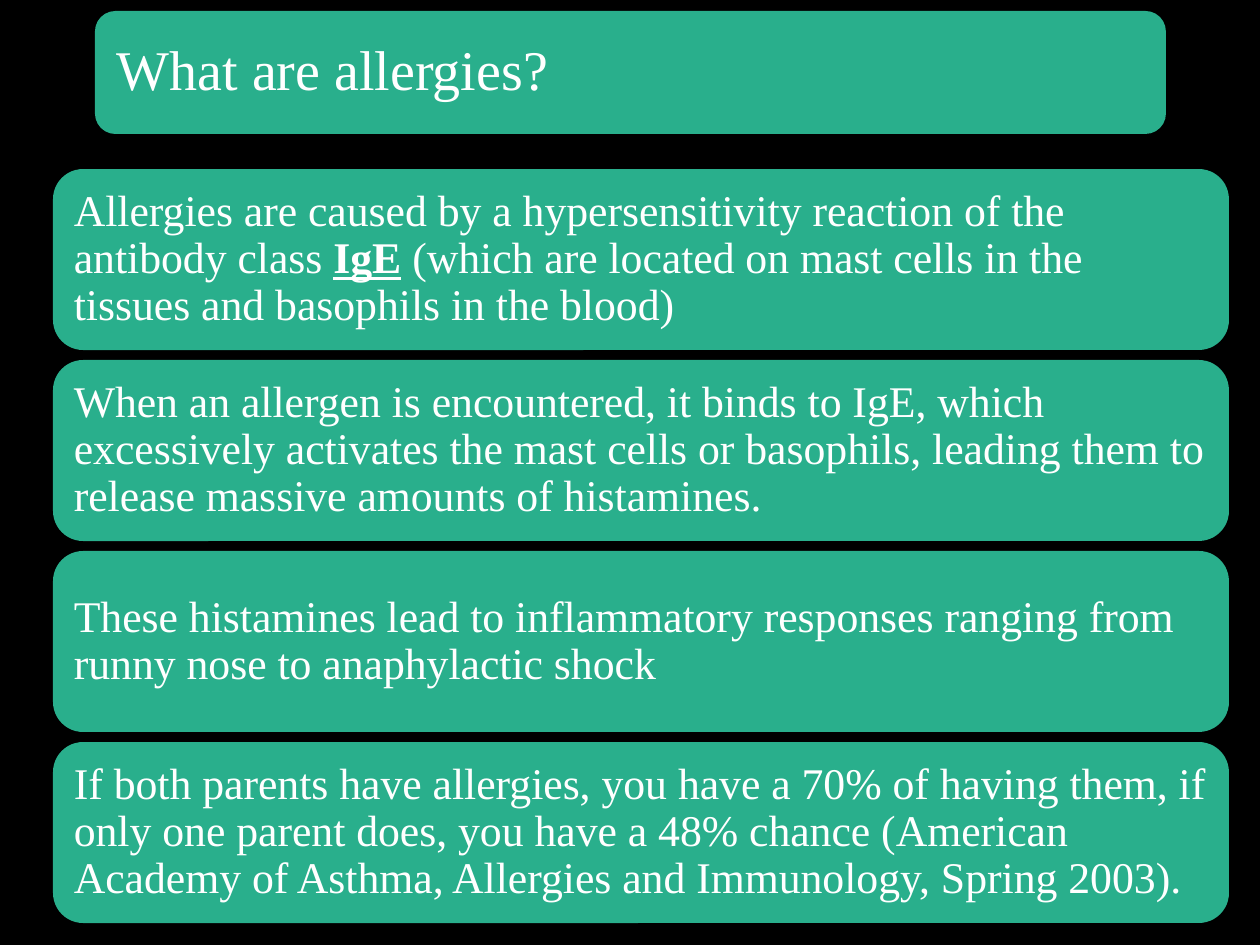
"""Build a slide that explains allergies in a title bar and four stacked cards."""
from dataclasses import dataclass

from pptx import Presentation
from pptx.dml.color import RGBColor
from pptx.enum.shapes import MSO_SHAPE
from pptx.enum.text import MSO_ANCHOR, PP_ALIGN
from pptx.slide import Slide
from pptx.util import Emu, Pt

ROUNDED = MSO_SHAPE.ROUNDED_RECTANGLE
MIDDLE = MSO_ANCHOR.MIDDLE
LEFT = PP_ALIGN.LEFT

BLACK = RGBColor(0x00, 0x00, 0x00)
GREEN = RGBColor(0x29, 0xAF, 0x8C)
WHITE = RGBColor(0xFF, 0xFF, 0xFF)
FONT = "Times New Roman"

PX_PER_INCH = 126
CARD_TOP = 169
CARD_PITCH = 191


@dataclass(frozen=True)
class Span:
    text: str
    strong: bool = False


@dataclass(frozen=True)
class Panel:
    left: int
    top: int
    width: int
    height: int
    inset: int
    size: int
    spans: tuple[Span, ...]


TITLE = Panel(95, 11, 1071, 123, 16, 32, (Span("What are allergies?"),))

CARD_TEXTS = (
    (
        Span("Allergies are caused by a hypersensitivity reaction of the antibody class "),
        Span("IgE", strong=True),
        Span(" (which are located on mast cells in the tissues and basophils in the blood)"),
    ),
    (
        Span(
            "When an allergen is encountered, it binds to IgE, which excessively "
            "activates the mast cells or basophils, leading them to release "
            "massive amounts of histamines."
        ),
    ),
    (
        Span(
            "These histamines lead to inflammatory responses ranging from "
            "runny nose to anaphylactic shock"
        ),
    ),
    (
        Span(
            "If both parents have allergies, you have a 70% of having them, "
            "if only one parent does, you have a 48% chance (American Academy "
            "of Asthma, Allergies and Immunology, Spring 2003)."
        ),
    ),
)


def px(length: int) -> Emu:
    """Turn pixels into EMU."""
    return Emu(round(length * 914400 / PX_PER_INCH))


def draw_panel(page: Slide, panel: Panel) -> None:
    """Draw one rounded panel with its text."""
    box = page.shapes.add_shape(
        ROUNDED, px(panel.left), px(panel.top), px(panel.width), px(panel.height)
    )
    box.shadow.inherit = False
    box.fill.solid()
    box.fill.fore_color.rgb = GREEN
    box.line.fill.background()

    frame = box.text_frame
    frame.word_wrap = True
    frame.vertical_anchor = MIDDLE
    frame.margin_left = frame.margin_right = px(panel.inset)
    frame.margin_top = frame.margin_bottom = px(panel.inset)

    para = frame.paragraphs[0]
    para.alignment = LEFT
    para.line_spacing = 0.9
    for span in panel.spans:
        run = para.add_run()
        run.text = span.text
        run.font.name = FONT
        run.font.size = Pt(panel.size)
        run.font.color.rgb = WHITE
        run.font.bold = span.strong
        run.font.underline = span.strong


def main() -> None:
    """Build and save the deck."""
    deck = Presentation()
    deck.slide_width = px(1260)
    deck.slide_height = px(945)
    page = deck.slides.add_slide(deck.slide_layouts[6])
    page.background.fill.solid()
    page.background.fill.fore_color.rgb = BLACK

    draw_panel(page, TITLE)
    for index, spans in enumerate(CARD_TEXTS):
        top = CARD_TOP + index * CARD_PITCH
        draw_panel(page, Panel(53, top, 1176, 181, 12, 25, spans))

    deck.save("out.pptx")


if __name__ == "__main__":
    main()
